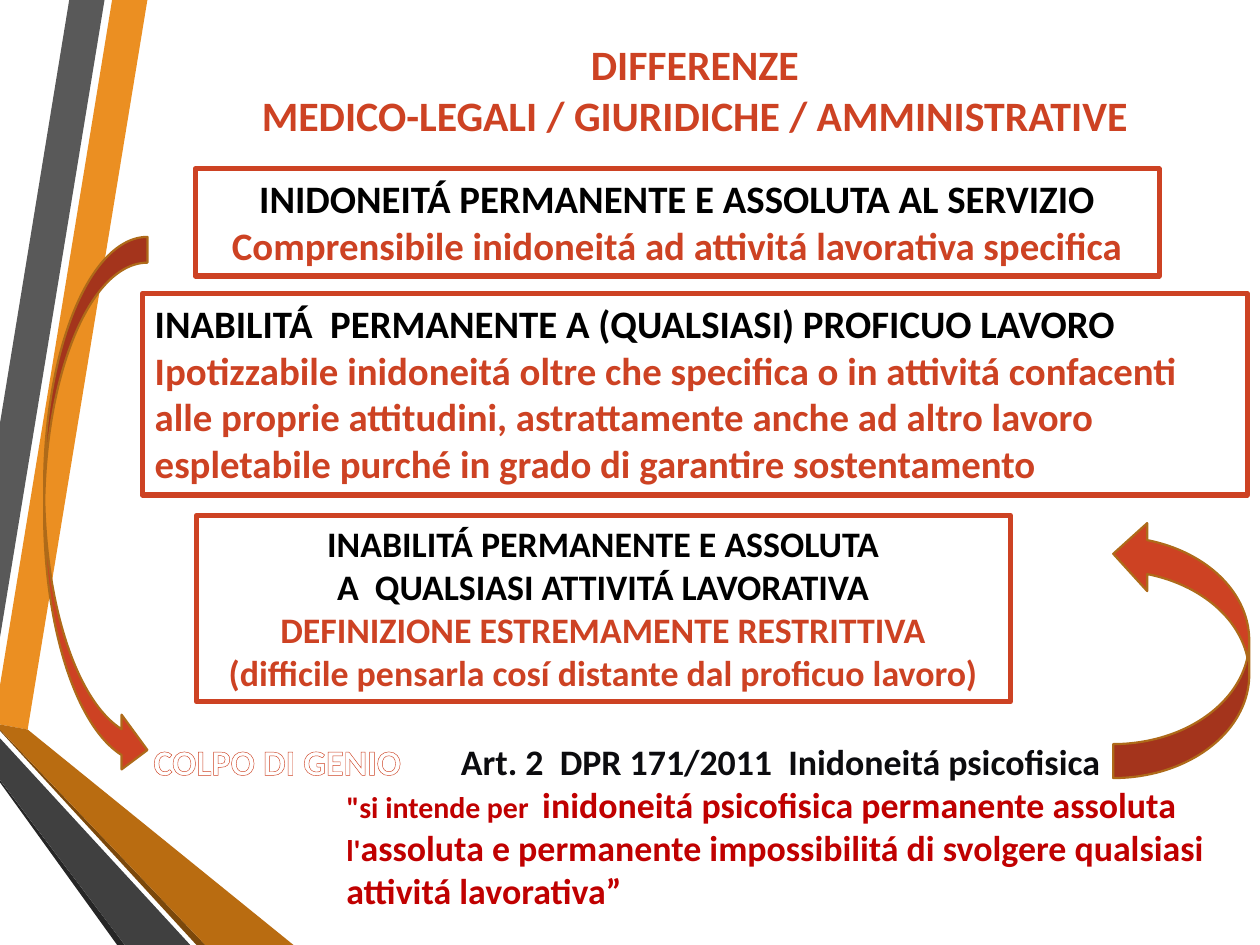
import pptx
import pptx.util
import pptx.dml.color
import pptx.enum.shapes
import pptx.enum.text
import lxml.etree

PX = 9144  # 100 px to the inch
RED, DEEP, BLACK, INK = "CD4223", "C00000", "000000", "0C0C0F"
Pt = pptx.util.Pt
Align = pptx.enum.text.PP_ALIGN
Kind = pptx.enum.shapes.MSO_SHAPE


def tint(text):
    return pptx.dml.color.RGBColor.from_string(text)


def fill_text(shape, lines, align):
    """Write lines of (colour, [(text, size), ...]) into a shape."""
    frame = shape.text_frame
    frame.word_wrap = True
    frame.auto_size = pptx.enum.text.MSO_AUTO_SIZE.NONE
    frame.vertical_anchor = pptx.enum.text.MSO_ANCHOR.TOP
    for i, (color, runs) in enumerate(lines):
        para = frame.add_paragraph() if i else frame.paragraphs[0]
        para.alignment = align
        font = para.font
        font.name, font.bold = "Calibri", True
        font.color.rgb = tint(color)
        font.size = Pt(runs[0][1])
        for text, size in runs:
            run = para.add_run()
            run.text = text
            if len(runs) > 1:
                run.font.size = Pt(size)


deck = pptx.Presentation()
deck.slide_width, deck.slide_height = 1000 * PX, 750 * PX
slide = deck.slides.add_slide(deck.slide_layouts[5])
shapes = slide.shapes

# Ribbons along the left edge
ribbons = [
    ("EB8F22", [(0, 544), (0, 575), (22, 579), (117, 0), (89, 0)]),
    ("595959", [(83, 0), (55, 0), (0, 336), (0, 506)]),
    ("262626", [(0, 619), (0, 621), (93, 750), (99, 750)]),
    ("7B480B", [(0, 579), (0, 580), (156, 750), (163, 750)]),
    ("B96C11", [(0, 579), (163, 750), (233, 750), (22, 579), (0, 575)]),
    ("404040", [(0, 619), (99, 750), (151, 750), (0, 586)]),
]
for color, points in ribbons:
    pen = shapes.build_freeform(*points[0], scale=PX)
    pen.add_line_segments(points[1:], close=True)
    band = pen.convert_to_shape()
    band.shadow.inherit = False
    band.fill.solid()
    band.fill.fore_color.rgb = tint(color)
    band.line.fill.background()

# Title
title = shapes.title
title.left, title.top, title.width, title.height = [n * PX for n in (123, 26, 857, 91)]
fill_text(title, [
    (RED, [("DIFFERENZE", 23.9)]),
    (RED, [("MEDICO-LEGALI / GIURIDICHE / AMMINISTRATIVE", 23.9)]),
], Align.CENTER)

# Framed definitions
frames = [
    ((113, 233, 877, 160), 22.2, Align.LEFT, [
        (BLACK, "INABILITÁ  PERMANENTE A (QUALSIASI) PROFICUO LAVORO"),
        (RED, "Ipotizzabile inidoneitá oltre che specifica o in attivitá confacenti "
              "alle proprie attitudini, astrattamente anche ad altro lavoro "
              "espletabile purché in grado di garantire sostentamento")]),
    ((155, 134, 765, 85), 22.2, Align.CENTER, [
        (BLACK, "INIDONEITÁ PERMANENTE E ASSOLUTA AL SERVIZIO"),
        (RED, "Comprensibile inidoneitá ad attivitá lavorativa specifica")]),
    ((156, 409, 646, 148), 20.5, Align.CENTER, [
        (BLACK, "INABILITÁ PERMANENTE E ASSOLUTA"),
        (BLACK, "A  QUALSIASI ATTIVITÁ LAVORATIVA"),
        (RED, "DEFINIZIONE ESTREMAMENTE RESTRITTIVA"),
        (RED, "(difficile pensarla cosí distante dal proficuo lavoro)")]),
]
for place, size, align, lines in frames:
    box = shapes.add_textbox(*[n * PX for n in place])
    box.line.color.rgb = tint(RED)
    box.line.width = Pt(3)
    fill_text(box, [(color, [(text, size)]) for color, text in lines], align)

# Article of law, first line indented
law = shapes.add_textbox(265 * PX, 582 * PX, 738 * PX, 148 * PX)
fill_text(law, [
    (INK, [("Art. 2  DPR 171/2011  Inidoneitá psicofisica", 20.5)]),
    (DEEP, [("\"si intende per  ", 17.1),
            ("inidoneitá psicofisica permanente assoluta", 20.5)]),
    (DEEP, [("l'", 17.1),
            ("assoluta e permanente impossibilitá di svolgere qualsiasi "
             "attivitá lavorativa”", 20.5)]),
], Align.LEFT)
law.text_frame.paragraphs[0]._p.get_or_add_pPr().set("indent", str(91 * PX))

# Outlined remark
note = shapes.add_textbox(112 * PX, 582 * PX, 236 * PX, 45 * PX)
fill_text(note, [("FFFFFF", [("COLPO DI GENIO", 20.5)])], Align.LEFT)
props = note.text_frame.paragraphs[0].runs[0]._r.get_or_add_rPr()
ns = "{http://schemas.openxmlformats.org/drawingml/2006/main}"
edge = lxml.etree.SubElement(props, ns + "ln", w=str(int(Pt(0.52))))
paint = lxml.etree.SubElement(edge, ns + "solidFill")
lxml.etree.SubElement(paint, ns + "srgbClr", val=RED)

# Curved arrows
arrows = [
    (Kind.CURVED_RIGHT_ARROW, (35, 188, 82, 429), 0, (0.25, 0.53, 0.25)),
    (Kind.CURVED_UP_ARROW, (835, 461, 205, 108), 270, (0.25, 0.5, 0.25)),
]
for kind, place, turn, bends in arrows:
    arrow = shapes.add_shape(kind, *[n * PX for n in place])
    arrow.rotation = turn
    for i, bend in enumerate(bends):
        arrow.adjustments[i] = bend
    arrow.shadow.inherit = False
    arrow.fill.solid()
    arrow.fill.fore_color.rgb = tint(RED)
    arrow.line.color.rgb = tint("AE6A19")
    arrow.line.width = Pt(1.25)

deck.save("out.pptx")
